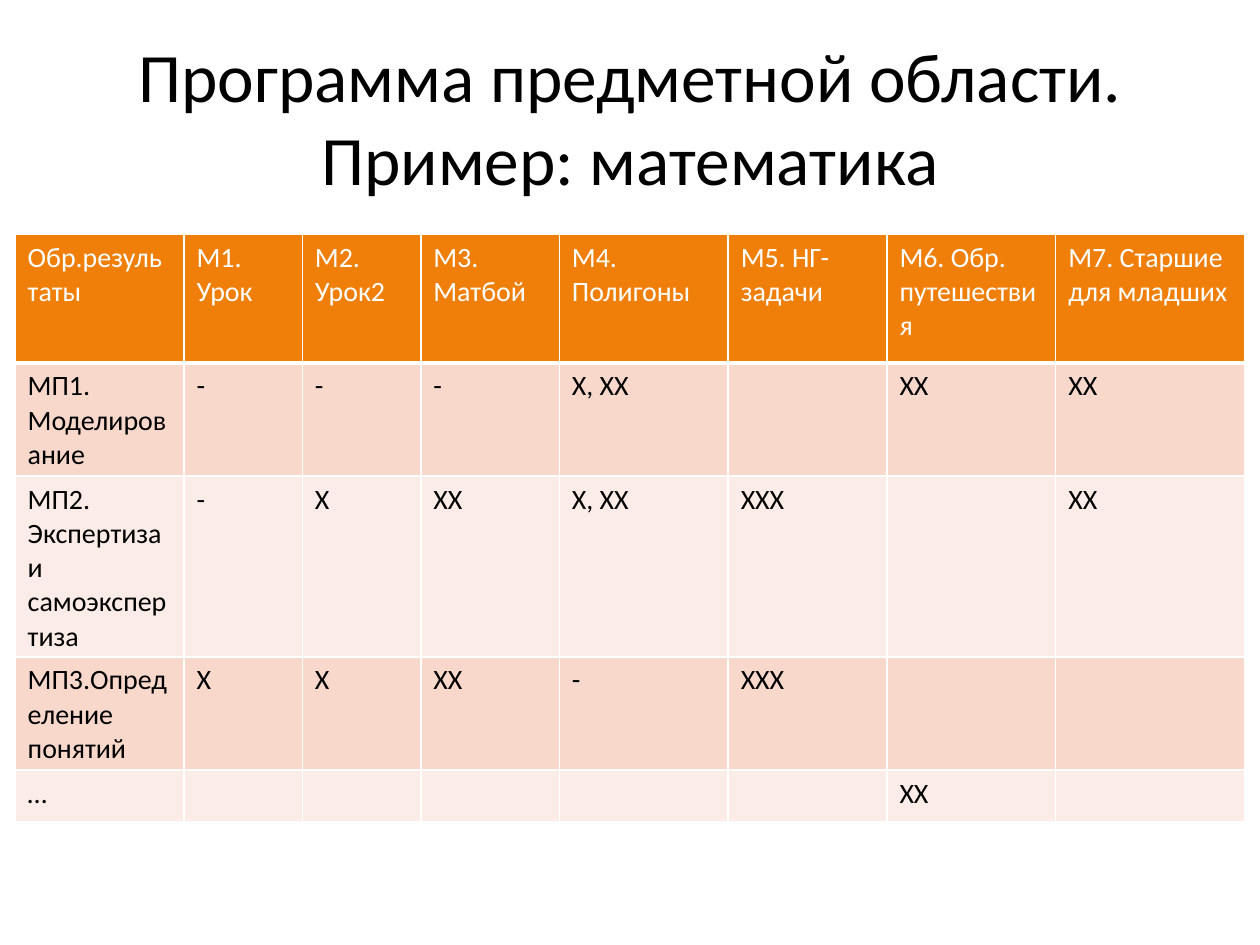
from lxml.etree import SubElement
from pptx import Presentation
from pptx.dml.color import RGBColor
from pptx.enum.text import MSO_ANCHOR, PP_ALIGN
from pptx.oxml.ns import qn
from pptx.util import Inches, Pt

FONT = "Calibri"
BLACK, WHITE = "000000", "FFFFFF"
HEADER_FILL = "F07F09"
BAND_FILLS = ("F9D8CC", "FCECE7")

TITLE = "Программа предметной области. Пример: математика"
TITLE_BOX = (0.5, 0.3, 9, 1.25)
TABLE_BOX = (0.12, 1.86, 9.76, 4.66)
COLUMN_WIDTHS = (1.34, 0.94, 0.94, 1.1, 1.34, 1.26, 1.34, 1.5)
HEADER_HEIGHT, ROW_HEIGHT = 1.02, 0.41
ROWS = (
    ("Обр.результаты", "М1. Урок", "М2. Урок2", "М3. Матбой", "М4. Полигоны",
     "М5. НГ-задачи", "М6. Обр. путешествия", "М7. Старшие для младших"),
    ("МП1. Моделирование", "-", "-", "-", "Х, ХХ", "", "ХХ", "ХХ"),
    ("МП2. Экспертиза и самоэкспертиза", "-", "Х", "ХХ", "Х, ХХ", "ХХХ", "", "ХХ"),
    ("МП3.Определение понятий", "Х", "Х", "ХХ", "-", "ХХХ", "", ""),
    ("…", "", "", "", "", "", "ХХ", ""),
)


def color(value):
    return RGBColor.from_string(value)


def write(text_frame, text, size=16, fill=BLACK, align=None):
    """Put one paragraph into a text frame; an empty one keeps its size."""
    paragraph = text_frame.paragraphs[0]
    paragraph.alignment = align
    target = paragraph
    if text:
        target = paragraph.add_run()
        target.text = text
    else:
        end = SubElement(paragraph._p, qn("a:endParaRPr"))
        end.set("sz", str(size * 100))
        return
    target.font.name = FONT
    target.font.size = Pt(size)
    target.font.bold = False
    target.font.color.rgb = color(fill)


def add_borders(cell, **widths):
    """Draw white cell borders; they must precede the fill in the XML."""
    properties = cell._tc.get_or_add_tcPr()
    for side, width in widths.items():
        line = SubElement(properties, qn(f"a:ln{side}"), w=str(Pt(width)))
        fill = SubElement(line, qn("a:solidFill"))
        SubElement(fill, qn("a:srgbClr"), val=WHITE)


def add_title(slide, box):
    text_frame = slide.shapes.add_textbox(*map(Inches, box)).text_frame
    text_frame.word_wrap = True
    text_frame.vertical_anchor = MSO_ANCHOR.MIDDLE
    write(text_frame, TITLE, size=39.6, align=PP_ALIGN.CENTER)


def add_results_table(slide, box):
    frame = slide.shapes.add_table(len(ROWS), len(COLUMN_WIDTHS), *map(Inches, box))
    table = frame.table
    for column, width in zip(table.columns, COLUMN_WIDTHS):
        column.width = Inches(width)
    for index, texts in enumerate(ROWS):
        header = index == 0
        # Body rows grow with their text
        table.rows[index].height = Inches(HEADER_HEIGHT if header else ROW_HEIGHT)
        for cell, text in zip(table.rows[index].cells, texts):
            if header:
                add_borders(cell, L=1, R=1, T=1, B=3)
            cell.fill.solid()
            cell.fill.fore_color.rgb = color(
                HEADER_FILL if header else BAND_FILLS[(index - 1) % 2])
            write(cell.text_frame, text, fill=WHITE if header else BLACK)
    frame.height = Inches(box[3])


def main():
    presentation = Presentation()
    presentation.slide_width, presentation.slide_height = Inches(10), Inches(7.5)
    slide = presentation.slides.add_slide(presentation.slide_layouts[6])
    add_title(slide, TITLE_BOX)
    add_results_table(slide, TABLE_BOX)
    presentation.save("out.pptx")


if __name__ == "__main__":
    main()
